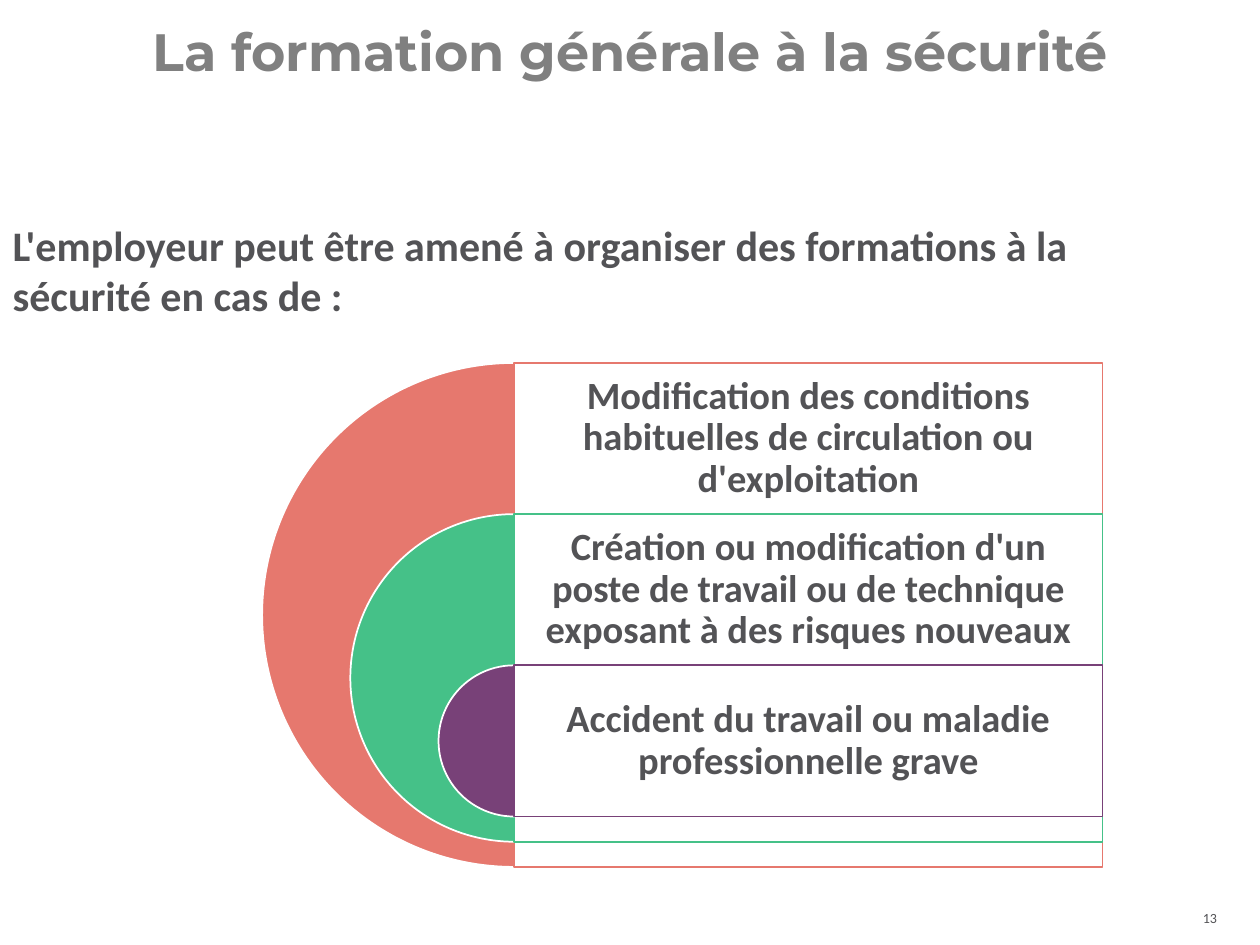
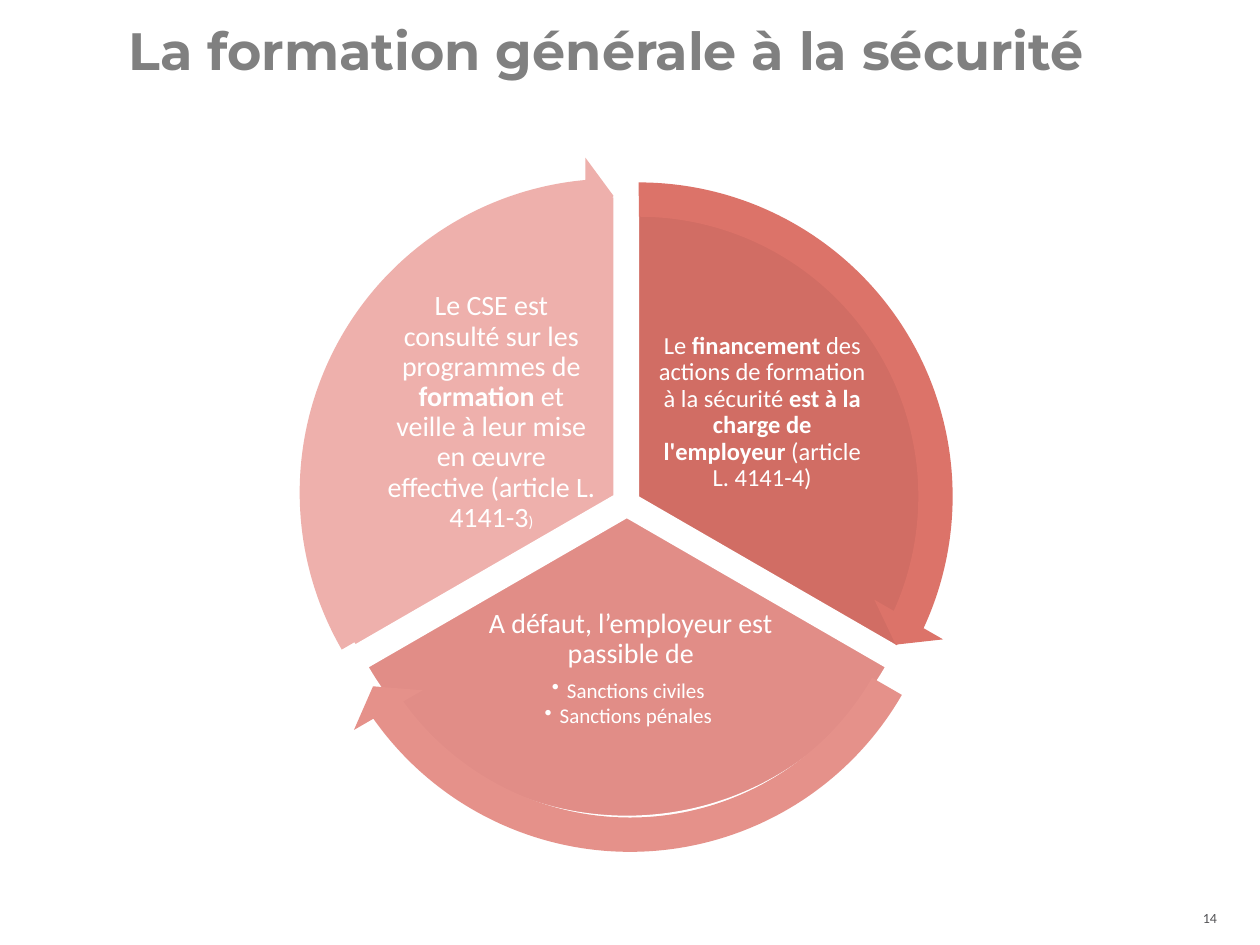
from dataclasses import dataclass

from lxml.etree import SubElement
from pptx import Presentation
from pptx.dml.color import RGBColor
from pptx.enum.shapes import MSO_SHAPE
from pptx.enum.text import MSO_ANCHOR, MSO_AUTO_SIZE, PP_ALIGN
from pptx.oxml.ns import qn
from pptx.util import Pt


@dataclass(frozen=True)
class Theme:
    title_font: str = "Montserrat"
    body_font: str = "Calibri"
    title_gray: str = "808080"
    ink: str = "535356"
    white: str = "FFFFFF"
    ring_colors: tuple = ("E6786E", "45C188", "784178")
    sector_colors: tuple = ("D16D64", "E18D87", "EEB0AC")
    arrow_colors: tuple = ("DC7369", "E5918A", "EEB0AC")
    title_size: int = 30
    intro_size: int = 24
    ring_size: int = 22
    sector_size: int = 16
    financing_size: int = 14
    bullet_size: int = 12
    small_size: int = 9
    number_size: int = 8


THEME = Theme()
FIRST_NUMBER = 13
TITLE = "La formation générale à la sécurité"
INTRO = "L'employeur peut être amené à organiser des formations à la sécurité en cas de :"
CAUSES = (
    "Modification des conditions habituelles de circulation ou d'exploitation",
    "Création ou modification d'un poste de travail ou de technique exposant à des risques nouveaux",
    "Accident du travail ou maladie professionnelle grave",
)
BOLD = {"bold": True}
FINANCING = (
    ("Le ", {}),
    ("financement", BOLD),
    (" des actions de formation à la sécurité ", {}),
    ("est à la charge de l'employeur ", BOLD),
    ("(article L. 4141-4)", {}),
)
CONSULTATION = (
    ("Le CSE est consulté sur les programmes de ", {}),
    ("formation ", BOLD),
    ("et veille à leur mise en œuvre effective (article L. 4141-3", {}),
    (")", {"size": Pt(THEME.small_size)}),
)
SANCTIONS = ("Sanctions civiles ", "Sanctions pénales ")


def apply(target, formats):
    for name, value in formats.items():
        setattr(target, name, value)


def place(shape, left, top, width, height):
    apply(shape, {"left": Pt(left), "top": Pt(top), "width": Pt(width), "height": Pt(height)})


def style_font(font, size, color, name=THEME.body_font, bold=False):
    apply(font, {"size": Pt(size), "name": name, "bold": bold})
    font.color.rgb = RGBColor.from_string(color)


def prepare_frame(box, inset=None, anchor=MSO_ANCHOR.TOP):
    frame = box.text_frame
    apply(frame, {"word_wrap": True, "auto_size": MSO_AUTO_SIZE.NONE, "vertical_anchor": anchor})
    if inset is not None:
        for side in ("left", "top", "right", "bottom"):
            setattr(frame, f"margin_{side}", Pt(inset))
    return frame


def write_spans(para, spans, size, color, align=PP_ALIGN.CENTER, spacing=0.9, after=0):
    """Fill a paragraph with (text, font overrides) pairs."""
    apply(para, {"alignment": align, "line_spacing": spacing,
                 "space_before": Pt(0), "space_after": Pt(after)})
    for text, overrides in spans:
        span = para.add_run()
        span.text = text
        style_font(span.font, size, color)
        apply(span.font, overrides)


def set_bullet(para, symbol=None, indent=0):
    properties = para._p.get_or_add_pPr()
    properties.set("marL", str(Pt(indent)))
    properties.set("indent", str(Pt(-indent)))
    if symbol:
        SubElement(properties, qn("a:buChar"), char=symbol)
    else:
        SubElement(properties, qn("a:buNone"))


def add_text(page, bounds, spans, size, color, inset, anchor=MSO_ANCHOR.MIDDLE, after=0):
    box = page.shapes.add_textbox(*map(Pt, bounds))
    frame = prepare_frame(box, inset, anchor)
    write_spans(frame.paragraphs[0], spans, size, color, after=after)
    return frame


def add_filled(page, kind, bounds, fill, line=None, opacity=None):
    shape = page.shapes.add_shape(kind, *map(Pt, bounds))
    shape.shadow.inherit = False
    shape.fill.solid()
    shape.fill.fore_color.rgb = RGBColor.from_string(fill)
    if opacity is not None:
        color = shape.fill._xPr.find(qn("a:solidFill"))[0]
        SubElement(color, qn("a:alpha"), val=str(opacity * 1000))
    if line:
        shape.line.color.rgb = RGBColor.from_string(line)
        shape.line.width = Pt(1)
    else:
        shape.line.fill.background()
    return shape


def angle(degrees):
    """Convert degrees to the unit of an adjustment value."""
    return degrees * 0.6


def add_pie(page, bounds, start, end, fill):
    pie = add_filled(page, MSO_SHAPE.PIE, bounds, fill, THEME.white)
    for index, degrees in enumerate((start, end)):
        pie.adjustments[index] = angle(degrees)


def add_arc_arrow(page, bounds, start, end, fill):
    """Draw an arrow along a thin arc; its head ends at the end angle."""
    head = 5.46
    arrow = add_filled(page, MSO_SHAPE.CIRCULAR_ARROW, bounds, fill)
    values = (0.051, angle(head), angle(end - head), angle(start), 0.059)
    for index, value in enumerate(values):
        arrow.adjustments[index] = value


def add_number(page, number):
    frame = add_text(page, (653, 517.7, 42.5, 14.4), (), THEME.number_size, THEME.ink, 0)
    para = frame.paragraphs[0]
    para.alignment = PP_ALIGN.RIGHT
    span = para.add_run()
    span.text = str(number)
    style_font(span.font, THEME.number_size, THEME.ink)
    field = span._r
    field.tag = qn("a:fld")
    field.set("id", "{B6F15528-21DE-4FAA-801E-634DDDAF4B2B}")
    field.set("type", "slidenum")


def add_page(deck, layout, title, left, top):
    page = deck.slides.add_slide(deck.slide_layouts.get_by_name(layout))
    place(page.shapes.title, left, top, 720, 44)
    frame = prepare_frame(page.shapes.title)
    title_format = {"name": THEME.title_font, "bold": True}
    write_spans(frame.paragraphs[0], [(title, title_format)], THEME.title_size,
                THEME.title_gray, spacing=1.0)
    add_number(page, FIRST_NUMBER + len(deck.slides) - 1)
    return page


def add_intro(page):
    body = page.placeholders[1]
    place(body, 0, 121.7, 700.5, 199.5)
    para = prepare_frame(body).paragraphs[0]
    write_spans(para, [(INTRO, BOLD)], THEME.intro_size, THEME.ink, PP_ALIGN.LEFT, 1.0)
    set_bullet(para)


def add_rings(page):
    """Nest half discs around one axis, each with a panel on its right."""
    axis, top, diameter, band, panel_width = 293.8, 207.4, 288, 86.4, 336.2
    for index, (cause, color) in enumerate(zip(CAUSES, THEME.ring_colors)):
        size = diameter - index * 100.8
        ring_top = top + index * band
        add_pie(page, (axis - size / 2, ring_top, size, size), 90, 270, color)
        add_filled(page, MSO_SHAPE.RECTANGLE, (axis, ring_top, panel_width, size),
                   THEME.white, color, opacity=90)
        add_text(page, (axis, ring_top, panel_width, band), [(cause, BOLD)],
                 THEME.ring_size, THEME.ink, inset=6.5)


def add_sanctions(page, bounds):
    frame = add_text(page, bounds, [("A défaut, l’employeur est passible de", {})],
                     THEME.sector_size, THEME.white, 1.4, MSO_ANCHOR.TOP, after=5.6)
    for sanction in SANCTIONS:
        para = frame.add_paragraph()
        write_spans(para, [(sanction, {})], THEME.bullet_size, THEME.white, after=1.8)
        set_bullet(para, "•", 8.6)


def add_cycle(page):
    pie_size, arrow_size = 342, 384.5
    starts = (270, 30, 150)
    pie_corners = ((193.7, 113), (187.2, 124.6), (180, 112.3))
    arrow_corners = ((172.8, 91.4), (167.8, 115.2), (158.4, 89.3))
    for start, corner, color in zip(starts, pie_corners, THEME.sector_colors):
        add_pie(page, (*corner, pie_size, pie_size), start, (start + 120) % 360, color)
    add_text(page, (374.4, 185, 122.4, 101.5), FINANCING, THEME.financing_size, THEME.white, 1.4)
    add_sanctions(page, (268.6, 347, 183.6, 89.3))
    add_text(page, (219.6, 185, 122.4, 101.5), CONSULTATION, THEME.sector_size, THEME.white, 1.4)
    for start, corner, color in zip(starts, arrow_corners, THEME.arrow_colors):
        add_arc_arrow(page, (*corner, arrow_size, arrow_size), start, (start + 120) % 360, color)


def main():
    deck = Presentation()
    apply(deck, {"slide_width": Pt(720), "slide_height": Pt(540)})
    deck.element.set("firstSlideNum", str(FIRST_NUMBER))

    causes_page = add_page(deck, "Title and Content", TITLE, 0, 7.2)
    add_intro(causes_page)
    add_rings(causes_page)

    cycle_page = add_page(deck, "Title Only", TITLE + " ", -9.4, 6.5)
    add_cycle(cycle_page)

    deck.save("out.pptx")


if __name__ == "__main__":
    main()
